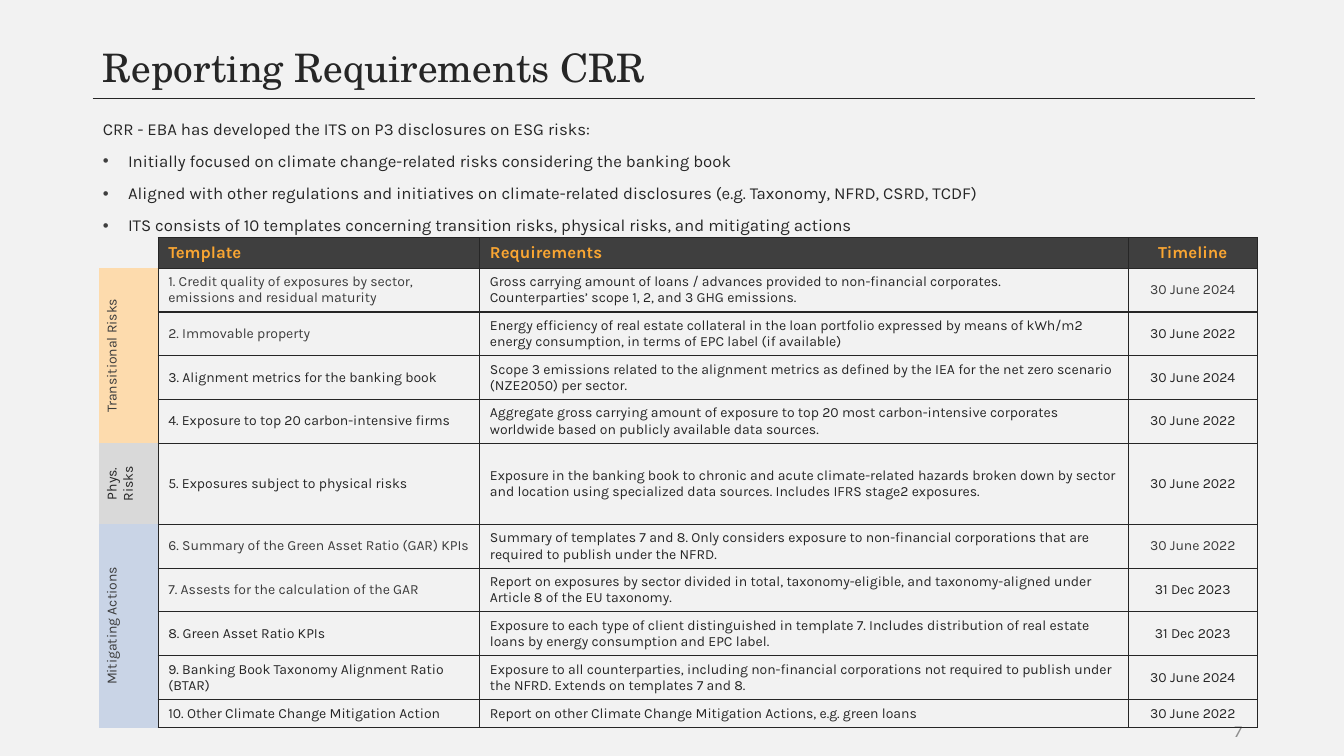
from lxml import etree
from pptx import Presentation
from pptx.dml.color import RGBColor
from pptx.enum import shapes, text
from pptx.oxml import ns
from pptx.util import Inches, Pt

# Content
TITLE = "Reporting Requirements CRR"
INTRO = "CRR - EBA has developed the ITS on P3 disclosures on ESG risks:"
POINTS = [
    "Initially focused on climate change-related risks considering the banking book",
    "Aligned with other regulations and initiatives on climate-related disclosures (e.g. Taxonomy, NFRD, CSRD, TCDF)",
    "ITS consists of 10 templates concerning transition risks, physical risks, and mitigating actions",
]
HEADS = ["Template", "Requirements", "Timeline"]
# Template, requirements, timeline, columns in the softer ink
ROWS = [
    ("1. Credit quality of exposures by sector, emissions and residual maturity",
     "Gross carrying amount of loans / advances provided to non-financial corporates.\n"
     "Counterparties’ scope 1, 2, and 3 GHG emissions.", "30 June 2024", (1, 3)),
    ("2. Immovable property",
     "Energy efficiency of real estate collateral in the loan portfolio expressed by means of kWh/m2 "
     "energy consumption, in terms of EPC label (if available)", "30 June 2022", (1,)),
    ("3. Alignment metrics for the banking book",
     "Scope 3 emissions related to the alignment metrics as defined by the IEA for the net zero scenario "
     "(NZE2050) per sector.", "30 June 2024", ()),
    ("4. Exposure to top 20 carbon-intensive firms",
     "Aggregate gross carrying amount of exposure to top 20 most carbon-intensive corporates "
     "worldwide based on publicly available data sources.", "30 June 2022", ()),
    ("5. Exposures subject to physical risks",
     "Exposure in the banking book to chronic and acute climate-related hazards broken down by sector "
     "and location using specialized data sources. Includes IFRS stage2 exposures.", "30 June 2022", ()),
    ("6. Summary of the Green Asset Ratio (GAR) KPIs",
     "Summary of templates 7 and 8. Only considers exposure to non-financial corporations that are "
     "required to publish under the NFRD.", "30 June 2022", (1, 3)),
    ("7. Assests for the calculation of the GAR",
     "Report on exposures by sector divided in total, taxonomy-eligible, and taxonomy-aligned under "
     "Article 8 of the EU taxonomy.", "31 Dec 2023", (1,)),
    ("8. Green Asset Ratio KPIs",
     "Exposure to each type of client distinguished in template 7. Includes distribution of real estate "
     "loans by energy consumption and EPC label.", "31 Dec 2023", ()),
    ("9. Banking Book Taxonomy Alignment Ratio (BTAR)",
     "Exposure to all counterparties, including non-financial corporations not required to publish under "
     "the NFRD. Extends on templates 7 and 8.", "30 June 2024", ()),
    ("10. Other Climate Change Mitigation Action",
     "Report on other Climate Change Mitigation Actions, e.g. green loans", "30 June 2022", ()),
]
# Label, first row, last row, fill, ink
GROUPS = [
    ("Transitional Risks", 1, 4, "peach", "soft"),
    ("Phys. Risks", 5, 5, "grey", "ink"),
    ("Mitigating Actions", 6, 10, "blue", "soft"),
]
COLS = [0.59, 3.19, 6.43, 1.28]
# Least heights: rows grow to fit their text
HEIGHTS = [0.19] + [0.28] * len(ROWS)
COLORS = {"page": "F2F2F2", "ink": "262626", "soft": "3C3C3C", "dark": "3F3F3F", "gold": "FAA632",
          "peach": "FDDBAD", "grey": "D9D9D9", "blue": "C9D4E6", "number": "8E8E8E"}
LEFT, WIDTH = 0.92, 11.5
MID = text.MSO_ANCHOR.MIDDLE
ALIGN = text.PP_ALIGN


def color(name):
    return RGBColor.from_string(COLORS[name])


def write(frame, words, size=10, ink="ink", font="Karla", bold=False, align=ALIGN.LEFT,
          lead=None, gap=0):
    frame.word_wrap = True
    frame.text = words
    for i, para in enumerate(frame.paragraphs):
        para.alignment = align
        para.line_spacing = lead
        para.space_before = Pt(gap if i else 0)
        for run in para.runs:
            run.font.name, run.font.size, run.font.bold = font, Pt(size), bold
            run.font.color.rgb = color(ink)


def bullet(para, on):
    props = para._p.get_or_add_pPr()
    props.set("marL", str(Inches(0.25) if on else 0))
    props.set("indent", str(Inches(-0.25) if on else 0))
    if on:
        tint = etree.SubElement(props, ns.qn("a:buClr"))
        etree.SubElement(tint, ns.qn("a:srgbClr"), val=COLORS["dark"])
        etree.SubElement(props, ns.qn("a:buChar"), char="•")
    else:
        etree.SubElement(props, ns.qn("a:buNone"))


def edge(cell, sides):
    props = cell._tc.get_or_add_tcPr()
    for side in "LRTB":
        line = etree.SubElement(props, ns.qn("a:ln" + side), w=str(Pt(1)))
        if side in sides:
            fill = etree.SubElement(line, ns.qn("a:solidFill"))
            etree.SubElement(fill, ns.qn("a:srgbClr"), val=COLORS["ink"])
        else:
            etree.SubElement(line, ns.qn("a:noFill"))


def place(shape, left, top, width, height):
    shape.left, shape.top = Inches(left), Inches(top)
    shape.width, shape.height = Inches(width), Inches(height)


deck = Presentation()
deck.slide_width, deck.slide_height = Inches(13.33), Inches(7.5)
slide = deck.slides.add_slide(deck.slide_layouts[1])
slide.background.fill.solid()
slide.background.fill.fore_color.rgb = color("page")

# Title and rule
title, body = slide.placeholders
place(title, LEFT, 0.4, WIDTH, 0.59)
title.text_frame.auto_size = text.MSO_AUTO_SIZE.NONE
title.text_frame.vertical_anchor = MID
write(title.text_frame, TITLE, size=28, font="TeX Gyre Schola", lead=0.9)
rule = slide.shapes.add_connector(shapes.MSO_CONNECTOR.STRAIGHT, Inches(LEFT), Inches(0.98),
                                  Inches(12.45), Inches(0.98))
rule.line.color.rgb, rule.line.width = color("ink"), Pt(1)
etree.SubElement(rule._element.spPr, ns.qn("a:effectLst"))

# Introduction
place(body, LEFT, 1.15, WIDTH, 5.58)
body.text_frame.auto_size = text.MSO_AUTO_SIZE.NONE
write(body.text_frame, "\n".join([INTRO] + POINTS), size=12, lead=0.9, gap=10)
for i, para in enumerate(body.text_frame.paragraphs):
    bullet(para, i > 0)

# Page number, clear of the table
number = slide.shapes.add_textbox(Inches(9.42), Inches(7.05), Inches(3), Inches(0.4))
number.text_frame.vertical_anchor = MID
write(number.text_frame, "7", size=12, ink="number", align=ALIGN.RIGHT)

# Table
table = slide.shapes.add_table(len(HEIGHTS), len(COLS), Inches(0.98), Inches(2.36),
                               Inches(sum(COLS)), Inches(sum(HEIGHTS))).table
table.first_row = table.horz_banding = False
for col, width in zip(table.columns, COLS):
    col.width = Inches(width)
for row, height in zip(table.rows, HEIGHTS):
    row.height = Inches(height)
for r in range(len(HEIGHTS)):
    for c in range(len(COLS)):
        cell = table.cell(r, c)
        edge(cell, "LRTB" if c else "R")
        cell.fill.background()
        cell.vertical_anchor = MID
        if not c:
            # Small type keeps the empty cell from stretching its row
            etree.SubElement(cell.text_frame.paragraphs[0]._p, ns.qn("a:endParaRPr"), sz="1000")
            continue
        align = ALIGN.CENTER if c == 3 else ALIGN.LEFT
        if r:
            ink = "soft" if c in ROWS[r - 1][3] else "ink"
            write(cell.text_frame, ROWS[r - 1][c - 1], ink=ink, align=align)
        else:
            cell.fill.solid()
            cell.fill.fore_color.rgb = color("dark")
            write(cell.text_frame, HEADS[c - 1], size=12, ink="gold", bold=True, align=align)

# Risk groups
for label, first, last, fill, ink in GROUPS:
    cell = table.cell(first, 0)
    if last > first:
        cell.merge(table.cell(last, 0))
    cell._tc.get_or_add_tcPr().set("vert", "vert270")
    cell.fill.solid()
    cell.fill.fore_color.rgb = color(fill)
    write(cell.text_frame, label, ink=ink, align=ALIGN.CENTER)

deck.save("out.pptx")
